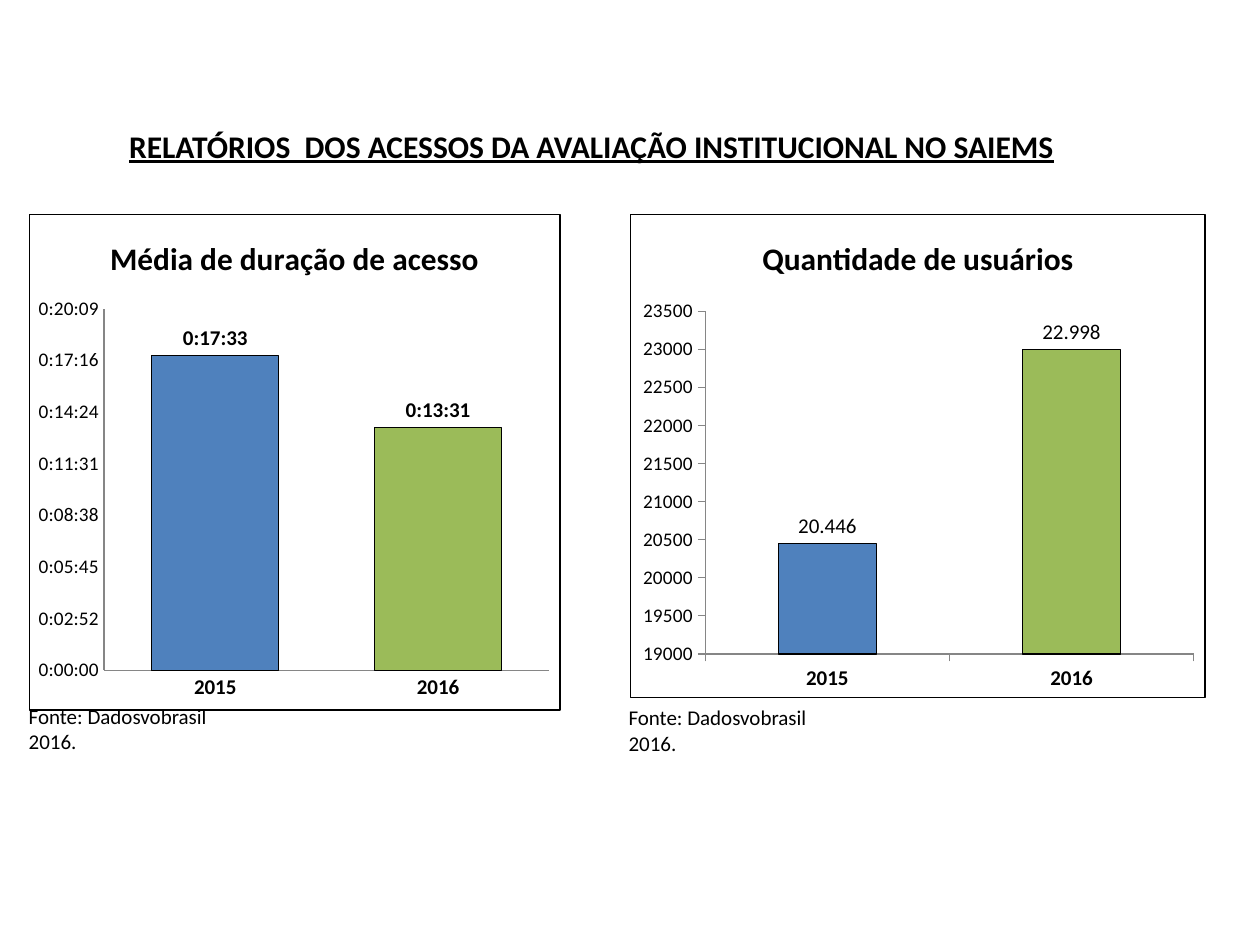
from lxml import etree
from pptx import Presentation
from pptx.chart.data import CategoryChartData
from pptx.dml.color import RGBColor
from pptx.enum.chart import XL_CHART_TYPE, XL_LABEL_POSITION, XL_TICK_MARK
from pptx.enum.shapes import MSO_SHAPE
from pptx.enum.text import MSO_ANCHOR, PP_ALIGN
from pptx.oxml import parse_xml
from pptx.oxml.ns import nsdecls
from pptx.util import Inches, Pt

COLORS = {"white": "FFFFFF", "text": "000000", "axis": "868686",
          "2015": "4F81BD", "2016": "9BBB59"}
FONT = "Calibri"
YEARS = ("2015", "2016")
DAY = 24 * 60 * 60  # seconds, since chart times are fractions of a day


def rgb(name):
    return RGBColor.from_string(COLORS[name])


def style_font(font, size, bold=False):
    font.name, font.size, font.bold = FONT, Pt(size), bold
    font.color.rgb = rgb("text")


def add_background(slide, left, top, width, height):
    s = slide.shapes.add_shape(MSO_SHAPE.RECTANGLE, Inches(left), Inches(top),
                               Inches(width), Inches(height))
    s.shadow.inherit = False
    s.fill.solid()
    s.fill.fore_color.rgb = rgb("white")
    s.line.fill.background()


def add_text(slide, box, text, size, align=PP_ALIGN.LEFT, heading=False):
    tf = slide.shapes.add_textbox(*map(Inches, box)).text_frame
    tf.word_wrap = heading
    tf.vertical_anchor = MSO_ANCHOR.MIDDLE
    p = tf.paragraphs[0]
    p.text, p.alignment = text, align
    style_font(p.font, size, heading)
    p.font.underline = heading


def add_border(chart):
    border = parse_xml(
        f'<c:spPr {nsdecls("c", "a")}><a:noFill/><a:ln w="{Pt(0.75)}"><a:solidFill>'
        f'<a:srgbClr val="{COLORS["text"]}"/></a:solidFill></a:ln></c:spPr>')
    chart._chartSpace.chart.addnext(border)


def set_plot_area(chart, x, y, w, h):
    """Place the inner plot area, in fractions of the chart."""
    plot_area = chart._chartSpace.chart.plotArea
    for old in plot_area.findall("c:layout", plot_area.nsmap):
        plot_area.remove(old)
    layout = parse_xml(f'<c:layout {nsdecls("c")}><c:manualLayout/></c:layout>')
    values = {"layoutTarget": "inner", "xMode": "edge", "yMode": "edge",
              "x": x, "y": y, "w": w, "h": h}
    for tag, value in values.items():
        child = etree.SubElement(layout[0], f'{{{layout.nsmap["c"]}}}{tag}')
        child.set("val", str(value))
    plot_area.insert(0, layout)


def add_year_chart(slide, box, title, values, scale, gap, tick, axis_format,
                   label_format, bold_labels, plot_box):
    data = CategoryChartData()
    data.categories = YEARS
    data.add_series("Series 1", values)
    chart = slide.shapes.add_chart(XL_CHART_TYPE.COLUMN_CLUSTERED,
                                   *map(Inches, box), data).chart
    style_font(chart.font, 10)
    add_border(chart)
    set_plot_area(chart, *plot_box)
    chart.has_legend = False

    # Title
    p = chart.chart_title.text_frame.paragraphs[0]
    p.text = title
    style_font(p.font, 18, True)

    # Axes
    for axis, size, bold in ((chart.category_axis, 12, True),
                             (chart.value_axis, 11, False)):
        axis.has_major_gridlines = False
        axis.major_tick_mark = tick
        axis.minor_tick_mark = XL_TICK_MARK.NONE
        axis.format.line.color.rgb = rgb("axis")
        style_font(axis.tick_labels.font, size, bold)
    axis = chart.value_axis
    axis.minimum_scale, axis.maximum_scale, axis.major_unit = scale
    axis.tick_labels.number_format = axis_format
    axis.tick_labels.number_format_is_linked = False

    # Columns, one colour per year
    plot = chart.plots[0]
    plot.gap_width = gap
    plot.vary_by_categories = False
    series = plot.series[0]
    for i, year in enumerate(YEARS):
        fmt = series.points[i].format
        fmt.fill.solid()
        fmt.fill.fore_color.rgb = rgb(year)
        fmt.line.color.rgb = rgb("text")
        fmt.line.width = Pt(0.75)

    # Value labels
    labels = series.data_labels
    labels.show_value = True
    labels.position = XL_LABEL_POSITION.OUTSIDE_END
    labels.number_format = label_format
    labels.number_format_is_linked = False
    style_font(labels.font, 12, bold_labels)


def main():
    prs = Presentation()
    prs.slide_width, prs.slide_height = Inches(10), Inches(7.5)
    slide = prs.slides.add_slide(prs.slide_layouts[6])

    add_background(slide, 0, 0.68, 10, 6.54)
    add_text(slide, (0.61, 0.92, 8.17, 0.47),
             "RELATÓRIOS  DOS ACESSOS DA AVALIAÇÃO INSTITUCIONAL NO SAIEMS",
             18, PP_ALIGN.CENTER, heading=True)
    for left, top in ((4.89, 5.56), (0.13, 5.55)):
        add_text(slide, (left, top, 1.97, 0.47), "Fonte: Dadosvobrasil 2016.", 12)

    add_year_chart(slide, (0.23, 1.7, 4.22, 3.94), "Média de duração de acesso",
                   (round(1053 / DAY, 6), round(811 / DAY, 6)), (0, 0.014, 0.002),
                   75, XL_TICK_MARK.NONE, "h:mm:ss", "h:mm:ss", True,
                   (0.14, 0.19, 0.84, 0.73))
    add_year_chart(slide, (5, 1.7, 4.57, 3.84), "Quantidade de usuários",
                   (20446, 22998), (19000, 23500, 500),
                   150, XL_TICK_MARK.OUTSIDE, "General", r"0\.000", False,
                   (0.13, 0.2, 0.85, 0.71))
    prs.save("out.pptx")


if __name__ == "__main__":
    main()
